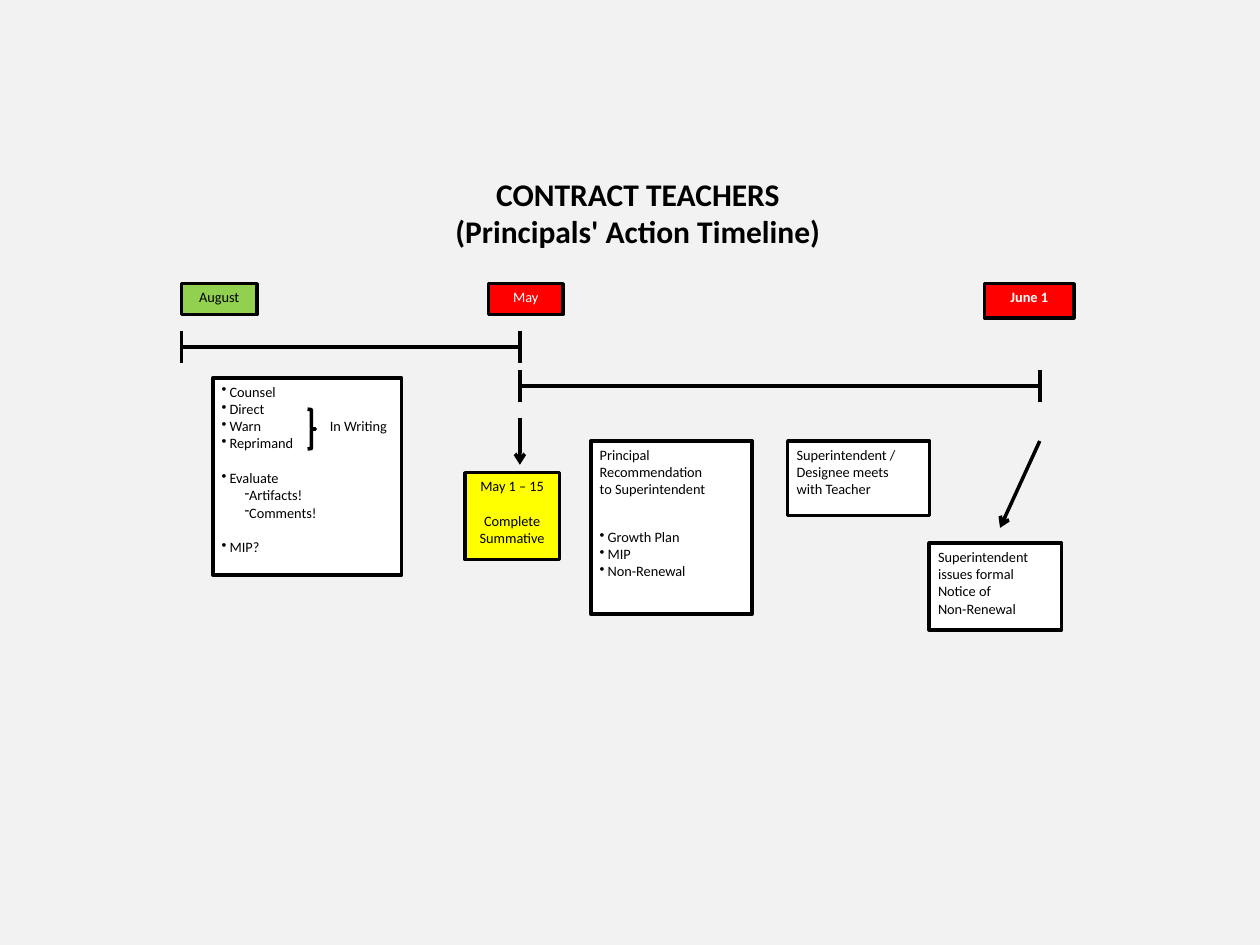
from lxml import etree
from pptx import Presentation
from pptx.dml.color import RGBColor
from pptx.enum.shapes import MSO_CONNECTOR, MSO_SHAPE
from pptx.enum.text import MSO_ANCHOR, MSO_AUTO_SIZE, PP_ALIGN
from pptx.oxml.ns import qn
from pptx.util import Cm, Pt

BLACK = RGBColor(0x00, 0x00, 0x00)
WHITE = RGBColor(0xFF, 0xFF, 0xFF)
GRAY = RGBColor(0xF2, 0xF2, 0xF2)
GREEN = RGBColor(0x92, 0xD0, 0x50)
RED = RGBColor(0xFF, 0x00, 0x00)
YELLOW = RGBColor(0xFF, 0xFF, 0x00)
RECT = MSO_SHAPE.RECTANGLE
BRACE = MSO_SHAPE.RIGHT_BRACE
STRAIGHT = MSO_CONNECTOR.STRAIGHT
LEFT, CENTER = PP_ALIGN.LEFT, PP_ALIGN.CENTER
TOP, MIDDLE = MSO_ANCHOR.TOP, MSO_ANCHOR.MIDDLE
NO_FIT = MSO_AUTO_SIZE.NONE

INDENTS = {"•": (0.16, -0.16), "-": (0.54, -0.08)}
TAB = 2.18
AUGUST, MAY, JUNE = 3.66, 10.48, 20.96


class Board:
    font = "Calibri"
    size = 8.2
    width = 2

    def __init__(self, slide):
        self.slide = slide
        fill = slide.background.fill
        fill.solid()
        fill.fore_color.rgb = GRAY

    def run(self, para, text, color=BLACK, size=size, bold=False):
        run = para.add_run()
        run.text = text
        run.font.name = self.font
        run.font.size = Pt(size)
        run.font.bold = bold
        run.font.color.rgb = color

    def title(self, lines, left, top, width, height):
        shape = self.slide.shapes.title
        shape.left, shape.top = Cm(left), Cm(top)
        shape.width, shape.height = Cm(width), Cm(height)
        frame = shape.text_frame
        frame.auto_size = NO_FIT
        frame.vertical_anchor = MIDDLE
        para = frame.paragraphs[0]
        para.alignment = CENTER
        for i, line in enumerate(lines):
            if i:
                para.add_line_break()
            self.run(para, line, size=18, bold=True)

    def bullet(self, para, mark):
        props = para._p.get_or_add_pPr()
        margin, indent = INDENTS[mark]
        props.set("marL", str(Cm(margin)))
        props.set("indent", str(Cm(indent)))
        etree.SubElement(props, qn("a:buChar"), char=mark)
        tabs = etree.SubElement(props, qn("a:tabLst"))
        etree.SubElement(tabs, qn("a:tab"), pos=str(Cm(TAB)), algn="l")

    def shape(self, kind, left, top, width, height):
        shape = self.slide.shapes.add_shape(
            kind, Cm(left), Cm(top), Cm(width), Cm(height))
        shape.shadow.inherit = False
        shape.fill.background()
        shape.line.color.rgb = BLACK
        shape.line.width = Pt(self.width)
        return shape

    def box(self, lines, left, top, width, height, fill=WHITE,
            color=BLACK, align=LEFT, bold=False):
        shape = self.shape(RECT, left, top, width, height)
        shape.fill.solid()
        shape.fill.fore_color.rgb = fill
        frame = shape.text_frame
        frame.word_wrap = True
        frame.vertical_anchor = TOP
        frame.margin_left = frame.margin_right = Cm(0.18)
        frame.margin_top = frame.margin_bottom = Cm(0.1)
        for i, (mark, text, gap) in enumerate(lines):
            para = frame.add_paragraph() if i else frame.paragraphs[0]
            para.alignment = align
            para.space_before = Pt(gap)
            if mark:
                self.bullet(para, mark)
            self.run(para, text, color, bold=bold)

    def line(self, x1, y1, x2, y2, arrow=False):
        line = self.slide.shapes.add_connector(
            STRAIGHT, Cm(x1), Cm(y1), Cm(x2), Cm(y2))
        line.line.color.rgb = BLACK
        line.line.width = Pt(self.width)
        if arrow:
            etree.SubElement(line.line._ln, qn("a:tailEnd"), type="arrow")
        etree.SubElement(line._element.spPr, qn("a:effectLst"))

    def span(self, start, end, y, half=0.32):
        self.line(start, y, end, y)
        for x in (start, end):
            self.line(x, y - half, x, y + half)


def main():
    deck = Presentation()
    deck.slide_width, deck.slide_height = Cm(25.4), Cm(19.05)
    board = Board(deck.slides.add_slide(deck.slide_layouts[5]))

    board.title(["CONTRACT TEACHERS", "(Principals' Action Timeline)"],
                4.76, 3.33, 16.2, 1.9)
    board.span(AUGUST, MAY, 6.99)
    board.span(MAY, JUNE, 7.78)

    for text, left, width, height, fill, color, bold in (
            ("August", 3.66, 1.52, 0.62, GREEN, BLACK, False),
            ("May", 9.85, 1.5, 0.62, RED, WHITE, False),
            ("June 1", 19.85, 1.8, 0.69, RED, WHITE, True)):
        board.box([("", text, 0)], left, 5.72, width, height,
                  fill, color, CENTER, bold)

    board.box([("•", "Counsel", 0), ("•", "Direct", 0),
               ("•", "Warn\tIn Writing", 0), ("•", "Reprimand", 0),
               ("•", "Evaluate", 10), ("-", "Artifacts!", 0),
               ("-", "Comments!", 0), ("•", "MIP?", 10)],
              4.29, 7.62, 3.81, 3.97)
    board.shape(BRACE, 6.2, 8.25, 0.16, 0.8)
    board.box([("", "May 1 – 15", 0), ("", "Complete Summative", 10)],
              9.37, 9.53, 1.91, 1.75, YELLOW, align=CENTER)
    board.box([("", "Principal Recommendation", 0),
               ("", "to Superintendent", 0), ("•", "Growth Plan", 17.5),
               ("•", "MIP", 0), ("•", "Non-Renewal", 0)],
              11.91, 8.89, 3.25, 3.49)
    board.box([("", "Superintendent / Designee meets", 0),
               ("", "with Teacher", 0)], 15.88, 8.89, 2.86, 1.5)
    board.box([("", "Superintendent issues formal Notice of", 0),
               ("", "Non-Renewal", 0)], 18.73, 10.95, 2.67, 1.75)

    board.line(MAY, 8.42, MAY, 9.37, arrow=True)
    board.line(JUNE, 8.89, 20.16, 10.64, arrow=True)
    deck.save("out.pptx")


if __name__ == "__main__":
    main()
